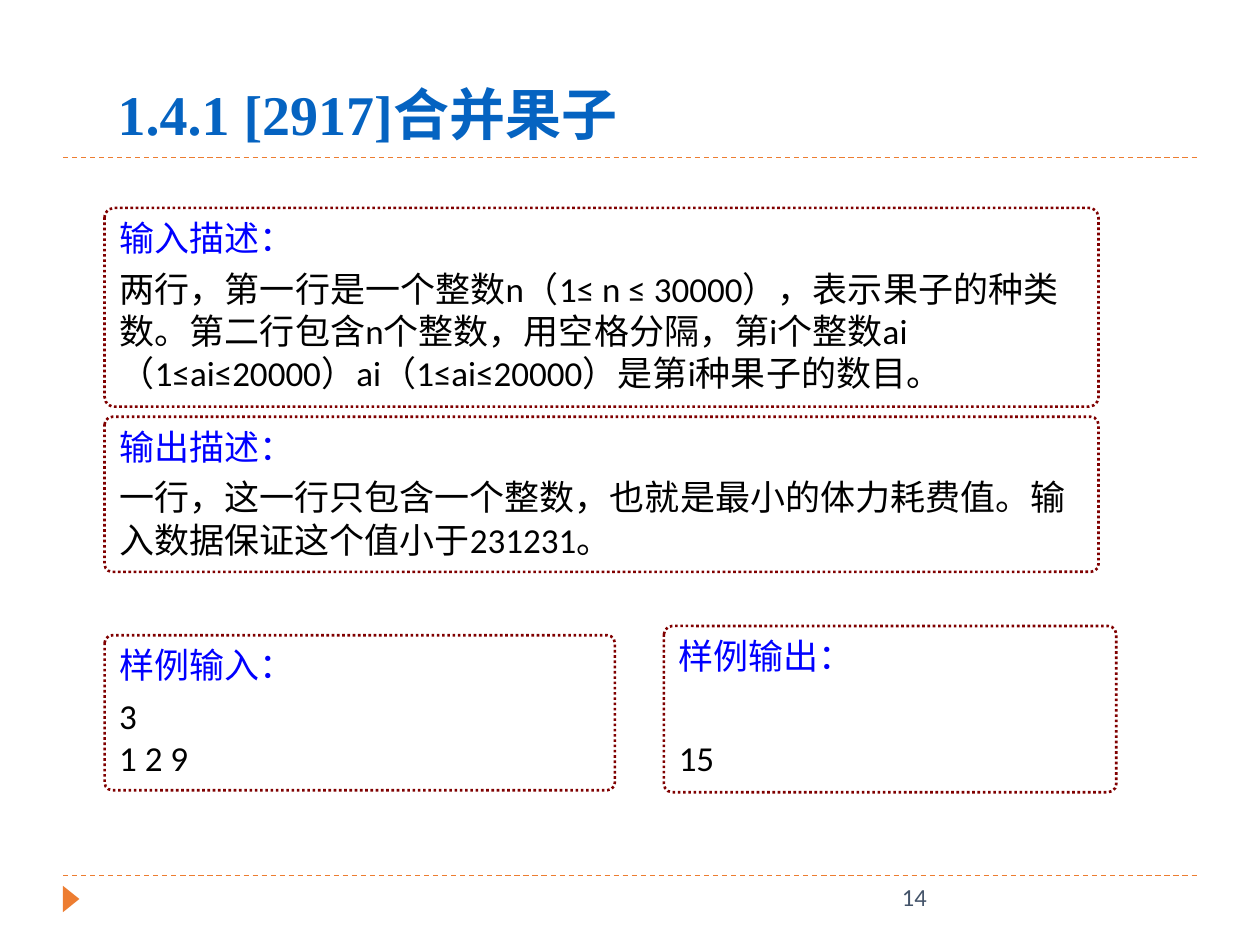
from lxml.etree import SubElement
from pptx import Presentation
from pptx.dml.color import RGBColor
from pptx.enum.dml import MSO_LINE
from pptx.enum.shapes import MSO_CONNECTOR, MSO_SHAPE
from pptx.enum.text import MSO_ANCHOR, PP_ALIGN
from pptx.oxml.ns import qn
from pptx.util import Pt

COLORS = {
    "accent": "ED7D31", "title": "0563C1", "heading": "0000FF", "body": "000000",
    "border": "800000", "panel": "FFFFFF", "number": "44546A",
}
TITLE = "1.4.1 [2917]合并果子"
PAGE_NUMBER = "14"
RULES_Y = (90, 500.4)
RULE_LEFT, RULE_RIGHT = 36, 684
PANEL_LEFT = 59.76
BODY_SIZE = 20
HEADING_GAP = 5

# heading, body lines, (left, top, width, height), space after heading
PANELS = [
    ("输入描述：",
     ["两行，第一行是一个整数n（1≤ n ≤ 30000），表示果子的种类数。第二行包含n个整数，"
      "用空格分隔，第i个整数ai（1≤ai≤20000）ai（1≤ai≤20000）是第i种果子的数目。"],
     (PANEL_LEFT, 118.8, 568, 113.6), HEADING_GAP),
    ("输出描述：",
     ["一行，这一行只包含一个整数，也就是最小的体力耗费值。输入数据保证这个值小于231231。"],
     (PANEL_LEFT, 238.2, 568, 88.6), HEADING_GAP),
    ("样例输出：", ["15"], (379.4, 357.7, 258.5, 95), 34),
    ("样例输入：", ["3", "1 2 9"], (PANEL_LEFT, 363, 291.6, 88.6), HEADING_GAP),
]


def color(name):
    return RGBColor.from_string(COLORS[name])


def style(paragraph, font_name, size, color_name, bold=False):
    paragraph.alignment = PP_ALIGN.LEFT
    paragraph.font.name = font_name
    paragraph.font.size = Pt(size)
    paragraph.font.color.rgb = color(color_name)
    paragraph.font.bold = bold


def add_rule(slide, y):
    rule = slide.shapes.add_connector(
        MSO_CONNECTOR.STRAIGHT, Pt(RULE_LEFT), Pt(y), Pt(RULE_RIGHT), Pt(y))
    rule.line.color.rgb = color("accent")
    rule.line.width = Pt(0.75)
    rule.line.dash_style = MSO_LINE.DASH
    SubElement(rule._element.spPr, qn("a:effectLst"))


def add_marker(slide):
    marker = slide.shapes.add_shape(
        MSO_SHAPE.ISOSCELES_TRIANGLE, Pt(33.1), Pt(509), Pt(15.1), Pt(9.4))
    marker.rotation = 90
    marker.shadow.inherit = False
    marker.fill.solid()
    marker.fill.fore_color.rgb = color("accent")
    marker.line.fill.background()


def add_panel(slide, heading, lines, box, heading_gap):
    panel = slide.shapes.add_shape(
        MSO_SHAPE.ROUNDED_RECTANGLE, *(Pt(length) for length in box))
    panel.adjustments[0] = 0.05
    panel.shadow.inherit = False
    panel.fill.solid()
    panel.fill.fore_color.rgb = color("panel")
    panel.line.color.rgb = color("border")
    panel.line.width = Pt(1.5)
    panel.line.dash_style = MSO_LINE.ROUND_DOT
    frame = panel.text_frame
    frame.word_wrap = True
    frame.vertical_anchor = MSO_ANCHOR.TOP
    paragraph = frame.paragraphs[0]
    paragraph.text = heading
    paragraph.space_after = Pt(heading_gap)
    style(paragraph, "Arial", BODY_SIZE, "heading")
    for line in lines:
        paragraph = frame.add_paragraph()
        paragraph.text = line
        style(paragraph, "Calibri", BODY_SIZE, "body")


def add_label(slide, text, box, font_name, size, color_name, bold=False, margin_left=7.2):
    label = slide.shapes.add_textbox(*(Pt(length) for length in box))
    frame = label.text_frame
    frame.word_wrap = True
    frame.margin_left = Pt(margin_left)
    frame.text = text
    style(frame.paragraphs[0], font_name, size, color_name, bold)


def main():
    presentation = Presentation()
    presentation.slide_width, presentation.slide_height = Pt(720), Pt(540)
    slide = presentation.slides.add_slide(presentation.slide_layouts[6])
    for y in RULES_Y:
        add_rule(slide, y)
    add_marker(slide)
    for panel in PANELS:
        add_panel(slide, *panel)
    add_label(slide, TITLE, (44, 41.8, 435, 46), "Times New Roman", 32, "title",
              bold=True, margin_left=23.2)
    add_label(slide, PAGE_NUMBER, (508.3, 500.4, 162, 28.8), "Calibri", 14, "number")
    presentation.save("out.pptx")


if __name__ == "__main__":
    main()
